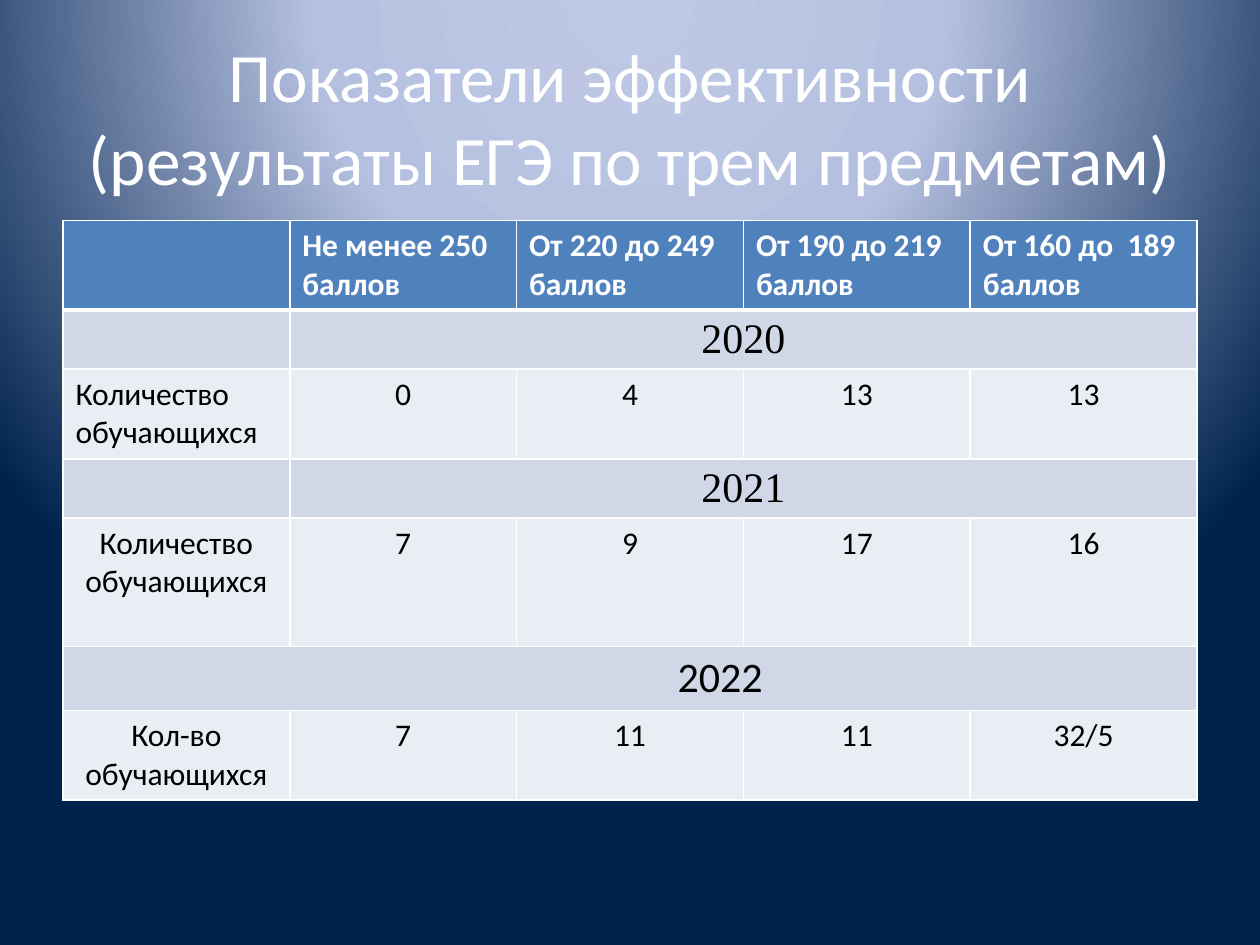
from lxml.etree import SubElement
from pptx import Presentation
from pptx.dml.color import RGBColor
from pptx.enum.text import MSO_ANCHOR, MSO_AUTO_SIZE, PP_ALIGN
from pptx.oxml import parse_xml
from pptx.oxml.ns import nsdecls, qn
from pptx.util import Inches, Pt

HEADER, YEAR, COUNT = "4F81BD", "D0D8E8", "E9EDF4"
LEFT, CENTER = PP_ALIGN.LEFT, PP_ALIGN.CENTER
TITLE_FORMAT = {"size": Pt(39.6), "name": "Calibri", "bold": False}
HEADER_FORMAT = {"size": Pt(18), "name": "Calibri", "bold": True}
COUNT_FORMAT = {"size": Pt(18), "name": "Calibri", "bold": False}
YEAR_FORMAT = {"size": Pt(24), "name": "Times New Roman", "bold": False}
LAST_YEAR_FORMAT = {**YEAR_FORMAT, "name": "Calibri"}

RESULTS = [
    ("header", 0.71, ["", "Не менее 250 баллов", "От 220 до 249 баллов",
                      "От 190 до 219 баллов", "От 160 до  189 баллов"]),
    ("year", 0.47, ["", "2020"]),
    ("count", 0.71, ["Количество обучающихся", "0", "4", "13", "13"]),
    ("year", 0.47, ["", "2021"]),
    ("count", 1.02, ["Количество обучающихся", "7", "9", "17", "16"]),
    ("last_year", 0.51, ["2022"]),
    ("count", 0.71, ["Кол-во обучающихся", "7", "11", "11", "32/5"]),
]
ROW_STYLES = {
    "header": (HEADER, "FFFFFF", LEFT, HEADER_FORMAT),
    "year": (YEAR, "000000", CENTER, YEAR_FORMAT),
    "last_year": (YEAR, "000000", CENTER, LAST_YEAR_FORMAT),
    "count": (COUNT, "000000", CENTER, COUNT_FORMAT),
}


def color(value):
    return RGBColor.from_string(value)


class SlideBuilder:
    def __init__(self, deck):
        self.slide = deck.slides.add_slide(deck.slide_layouts[5])

    def background(self, stops):
        fill = self.slide.background.fill
        fill.gradient()
        properties = self.slide.element.find(".//" + qn("p:bgPr"))
        gradient = parse_xml(
            f'<a:gradFill {nsdecls("a")} rotWithShape="1"><a:gsLst/>'
            '<a:path path="circle">'
            '<a:fillToRect l="50000" t="-80000" r="50000" b="180000"/>'
            '</a:path></a:gradFill>')
        for position, value in stops:
            stop = SubElement(gradient[0], qn("a:gs"), pos=str(position * 1000))
            SubElement(stop, qn("a:srgbClr"), val=value)
        properties.replace(properties.find(qn("a:gradFill")), gradient)

    def add_text(self, frame, text, alignment, value, formats):
        para = frame.paragraphs[0]
        para.alignment = alignment
        span = para.add_run()
        span.text = text
        span.font.color.rgb = color(value)
        for name, setting in formats.items():
            setattr(span.font, name, setting)

    def title(self, text, left, top, width, height):
        box = self.slide.shapes.title
        box.left, box.top = Inches(left), Inches(top)
        box.width, box.height = Inches(width), Inches(height)
        frame = box.text_frame
        frame.word_wrap = True
        frame.auto_size = MSO_AUTO_SIZE.NONE
        frame.vertical_anchor = MSO_ANCHOR.MIDDLE
        self.add_text(frame, text, CENTER, "FFFFFF", TITLE_FORMAT)

    def borders(self, cell, widths):
        properties = cell._tc.get_or_add_tcPr()
        for index, (side, width) in enumerate(widths.items()):
            properties.insert(index, parse_xml(
                f'<a:ln{side} {nsdecls("a")} w="{Pt(width)}"><a:solidFill>'
                f'<a:srgbClr val="FFFFFF"/></a:solidFill></a:ln{side}>'))

    def table(self, rows, left, top, column_width, column_count):
        height = sum(row_height for _, row_height, _ in rows)
        table = self.slide.shapes.add_table(
            len(rows), column_count, Inches(left), Inches(top),
            Inches(column_width * column_count), Inches(height)).table
        for column in table.columns:
            column.width = Inches(column_width)
        for index, (kind, row_height, texts) in enumerate(rows):
            fill, text_color, alignment, formats = ROW_STYLES[kind]
            table.rows[index].height = Inches(row_height)
            widths = {"L": 1, "R": 1, "T": 3 if index == 1 else 1,
                      "B": 3 if kind == "header" else 1}
            for cell in table.rows[index].cells:
                cell.fill.solid()
                cell.fill.fore_color.rgb = color(fill)
                self.borders(cell, widths)
            for number, text in enumerate(texts):
                if text:
                    self.add_text(table.cell(index, number).text_frame, text,
                                  alignment, text_color, formats)
            if len(texts) < column_count:
                table.cell(index, len(texts) - 1).merge(
                    table.cell(index, column_count - 1))
        return table


def main():
    deck = Presentation()
    deck.slide_width, deck.slide_height = Inches(10), Inches(7.5)
    builder = SlideBuilder(deck)
    builder.background([(0, "BFC9E5"), (40, "B5C0E0"), (100, "00234D")])
    builder.title("Показатели эффективности (результаты ЕГЭ по трем предметам)",
                  0.5, 0.3, 9, 1.25)
    table = builder.table(RESULTS, 0.5, 1.75, 1.8, 5)
    table.cell(2, 0).text_frame.paragraphs[0].alignment = LEFT
    table.cell(5, 0).margin_left = Inches(1.53)
    deck.save("out.pptx")


if __name__ == "__main__":
    main()
